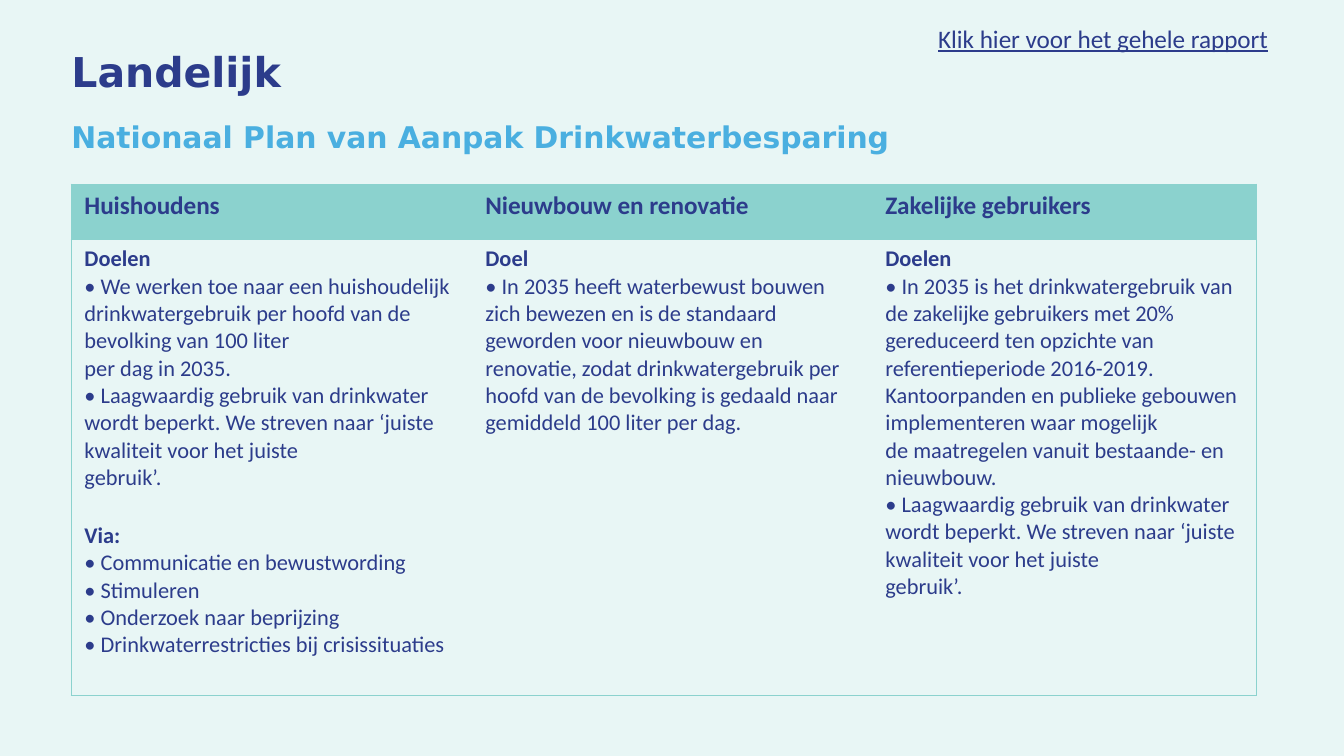
"""Build the slide on the national plan for saving drinking water."""
from dataclasses import dataclass

from lxml.etree import SubElement
from pptx import Presentation
from pptx.dml.color import RGBColor
from pptx.enum.text import MSO_ANCHOR, MSO_AUTO_SIZE, PP_ALIGN
from pptx.oxml.ns import qn
from pptx.util import Pt

SCALE = 914400 / 134.4
COLORS = {"navy": "2C3C8B", "sky": "4AAFE0", "teal": "8BD2CE", "pale": "E8F6F5"}
HEAD, BODY = "DejaVu Sans", "Calibri"
WIDTHS = (401, 400, 384)
HEIGHTS = (55, 457)
NO_STYLE = "{2D5ABB26-0587-4C30-8999-92F81FD0307C}"


@dataclass
class Group:
    title: str
    lines: list[str]


@dataclass
class Column:
    name: str
    groups: list[Group]


LOW_USE = [
    "• Laagwaardig gebruik van drinkwater wordt beperkt. We streven naar ‘juiste kwaliteit voor het juiste",
    "gebruik’.",
]
COLUMNS = [
    Column("Huishoudens", [
        Group("Doelen", [
            "• We werken toe naar een huishoudelijk drinkwatergebruik per hoofd van de bevolking van 100 liter",
            "per dag in 2035.",
            *LOW_USE,
        ]),
        Group("Via:", [
            "• Communicatie en bewustwording",
            "• Stimuleren",
            "• Onderzoek naar beprijzing",
            "• Drinkwaterrestricties bij crisissituaties",
        ]),
    ]),
    Column("Nieuwbouw en renovatie", [
        Group("Doel", [
            "• In 2035 heeft waterbewust bouwen zich bewezen en is de standaard geworden voor nieuwbouw "
            "en renovatie, zodat drinkwatergebruik per hoofd van de bevolking is gedaald naar "
            "gemiddeld 100 liter per dag.",
        ]),
    ]),
    Column("Zakelijke gebruikers", [
        Group("Doelen", [
            "• In 2035 is het drinkwatergebruik van de zakelijke gebruikers met 20% gereduceerd ten opzichte van",
            "referentieperiode 2016-2019. Kantoorpanden en publieke gebouwen implementeren waar mogelijk",
            "de maatregelen vanuit bestaande- en nieuwbouw.",
            *LOW_USE,
        ]),
    ]),
]


def px(count: int) -> int:
    return round(count * SCALE)


def rgb(name: str) -> RGBColor:
    return RGBColor.from_string(COLORS[name])


def write(para, text: str, *, size: float = 12, face: str = BODY, color: str = "navy",
          bold: bool = False, under: bool = False, before: float = 0) -> None:
    para.alignment = PP_ALIGN.LEFT
    para.space_before = Pt(before)
    run = para.add_run()
    run.text = text
    font = run.font
    font.size, font.name, font.bold, font.underline = Pt(size), face, bold, under
    font.color.rgb = rgb(color)


def place(shape, left: int, top: int, width: int, height: int) -> None:
    shape.left, shape.top = px(left), px(top)
    shape.width, shape.height = px(width), px(height)
    shape.text_frame.word_wrap = True
    shape.text_frame.auto_size = MSO_AUTO_SIZE.NONE


def edge(cell, sides: str) -> None:
    props = cell._tc.get_or_add_tcPr()
    for side in sides:
        line = SubElement(props, qn(f"a:ln{side}"), w=str(Pt(0.5)))
        fill = SubElement(line, qn("a:solidFill"))
        SubElement(fill, qn("a:srgbClr"), val=COLORS["teal"])


def fill_cell(cell, groups: list[Group]) -> None:
    frame = cell.text_frame
    for spot, group in enumerate(groups):
        para = frame.add_paragraph() if spot else frame.paragraphs[0]
        write(para, group.title, bold=True, before=16.5 if spot else 0)
        for line in group.lines:
            write(frame.add_paragraph(), line)


def draw_table(slide) -> None:
    table = slide.shapes.add_table(
        2, len(COLUMNS), px(71), px(184), px(sum(WIDTHS)), px(sum(HEIGHTS))).table
    table._tbl.tblPr[0].text = NO_STYLE
    table.horz_banding = False
    for row, height in zip(table.rows, HEIGHTS):
        row.height = px(height)
    last = len(COLUMNS) - 1
    for spot, (column, width) in enumerate(zip(COLUMNS, WIDTHS)):
        table.columns[spot].width = px(width)
        sides = ("L" if spot == 0 else "") + ("R" if spot == last else "") + "T"
        top, main = table.cell(0, spot), table.cell(1, spot)
        edge(top, sides)
        edge(main, sides + "B")
        top.fill.solid()
        top.fill.fore_color.rgb = rgb("teal")
        main.fill.background()
        write(top.text_frame.paragraphs[0], column.name, size=13.5, bold=True)
        fill_cell(main, column.groups)


def main() -> None:
    deck = Presentation()
    deck.slide_width, deck.slide_height = px(1344), px(756)
    slide = deck.slides.add_slide(deck.slide_layouts[1])
    slide.background.fill.solid()
    slide.background.fill.fore_color.rgb = rgb("pale")

    title = slide.shapes.title
    place(title, 58, 40, 1159, 69)
    title.text_frame.vertical_anchor = MSO_ANCHOR.MIDDLE
    para = title.text_frame.paragraphs[0]
    para.line_spacing = 0.9
    write(para, "Landelijk", size=22, face=HEAD, bold=True)

    body = slide.placeholders[1]
    place(body, 58, 112, 1159, 52)
    para = body.text_frame.paragraphs[0]
    props = para._p.get_or_add_pPr()
    props.set("marL", "0")
    props.set("indent", "0")
    SubElement(props, qn("a:buNone"))
    write(para, "Nationaal Plan van Aanpak Drinkwaterbesparing",
          size=16, face=HEAD, color="sky", bold=True)

    draw_table(slide)

    link = slide.shapes.add_textbox(0, 0, 0, 0)
    place(link, 925, 17, 368, 44)
    write(link.text_frame.paragraphs[0], "Klik hier voor het gehele rapport",
          size=13.5, under=True)
    deck.save("out.pptx")


if __name__ == "__main__":
    main()
